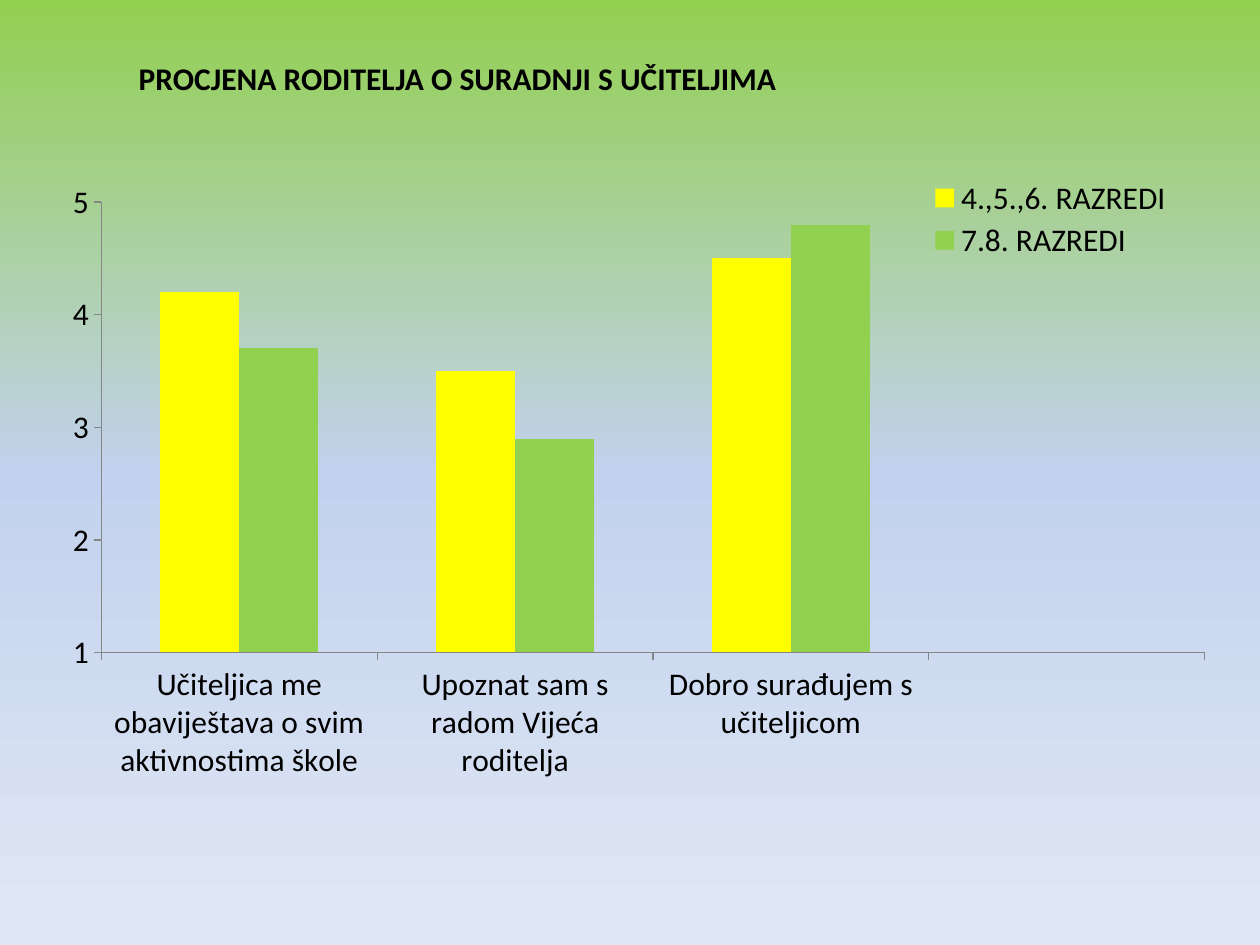
from copy import deepcopy

from pptx import Presentation
from pptx import util as u
from pptx.chart import data
from pptx.dml.color import RGBColor
from pptx.enum import chart as charts, text
from pptx.oxml import parse_xml
from pptx.oxml.ns import nsdecls

THEME = {
    "font": "Calibri",
    "size": u.Pt(18),
    "text": RGBColor.from_string("000000"),
    "axis": RGBColor.from_string("868686"),
    "series": ("FFFF00", "92D050"),
    "background": ((0, "92D050"), (0.5, "C2D1ED"), (1, "E1E8F5")),
}


def style_font(font, bold=False):
    font.name, font.size, font.bold = THEME["font"], THEME["size"], bold
    font.color.rgb = THEME["text"]


def set_layout(element, left, top, width, height, target=""):
    layout = parse_xml(
        f'<c:layout {nsdecls("c")}><c:manualLayout>{target}'
        '<c:xMode val="edge"/><c:yMode val="edge"/>'
        f'<c:x val="{left}"/><c:y val="{top}"/><c:w val="{width}"/><c:h val="{height}"/>'
        '</c:manualLayout></c:layout>')
    for old in element.findall(layout.tag):
        element.remove(old)
    position = 1 if element.tag.endswith("legend") else 0
    element.insert(position, layout)


presentation = Presentation()
presentation.slide_width, presentation.slide_height = u.Inches(10), u.Inches(7.5)
column = presentation.slide_width // 120
row = presentation.slide_height // 90
slide = presentation.slides.add_slide(presentation.slide_layouts[5])

fill = slide.background.fill
fill.gradient()
fill.gradient_angle = 270
stops = slide.element.xpath(".//a:gsLst")[0]
stops.append(deepcopy(stops[0]))
for stop, (position, color) in zip(fill.gradient_stops, THEME["background"]):
    stop.position = position
    stop.color.rgb = RGBColor.from_string(color)

title = slide.shapes.title
title.left, title.top, title.width, title.height = 12 * column, 5 * row, 100 * column, 5 * row
frame = title.text_frame
frame.word_wrap = True
frame.auto_size = text.MSO_AUTO_SIZE.NONE
frame.vertical_anchor = text.MSO_ANCHOR.TOP
paragraph = frame.paragraphs[0]
paragraph.alignment = text.PP_ALIGN.LEFT
run = paragraph.add_run()
run.text = "PROCJENA RODITELJA O SURADNJI S UČITELJIMA"
style_font(run.font, bold=True)

ratings = data.CategoryChartData(number_format="General")
ratings.categories = (
    "Učiteljica me obaviještava o svim aktivnostima škole",
    "Upoznat sam s radom Vijeća roditelja",
    "Dobro surađujem s učiteljicom",
    "",
)
ratings.add_series("4.,5.,6. RAZREDI", (4.2, 3.5, 4.5, None))
ratings.add_series("7.8. RAZREDI", (3.7, 2.9, 4.8, None))
chart = slide.shapes.add_chart(
    charts.XL_CHART_TYPE.COLUMN_CLUSTERED,
    4 * column, 16 * row, 113 * column, 65 * row, ratings).chart
style_font(chart.font)
chart.has_title = False

plot = chart.plots[0]
plot.gap_width, plot.overlap = 150, 0
plot.vary_by_categories = False
for series, color in zip(plot.series, THEME["series"]):
    series.format.fill.solid()
    series.format.fill.fore_color.rgb = RGBColor.from_string(color)

for axis in (chart.category_axis, chart.value_axis):
    axis.has_major_gridlines = False
    axis.major_tick_mark = charts.XL_TICK_MARK.OUTSIDE
    axis.minor_tick_mark = charts.XL_TICK_MARK.NONE
    axis.format.line.color.rgb = THEME["axis"]
    axis.format.line.width = u.Pt(0.75)
    style_font(axis.tick_labels.font)
scale = chart.value_axis
scale.minimum_scale, scale.maximum_scale, scale.major_unit = 1, 5, 1

chart.has_legend = True
legend = chart.legend
legend.position = charts.XL_LEGEND_POSITION.RIGHT
legend.include_in_layout = True
style_font(legend.font)
plot_area = chart.element.xpath(".//c:plotArea")[0]
set_layout(plot_area, 0.05, 0.05, 0.93, 0.66, '<c:layoutTarget val="inner"/>')
set_layout(chart.element.xpath(".//c:legend")[0], 0.74, 0.01, 0.22, 0.13)

presentation.save("out.pptx")
